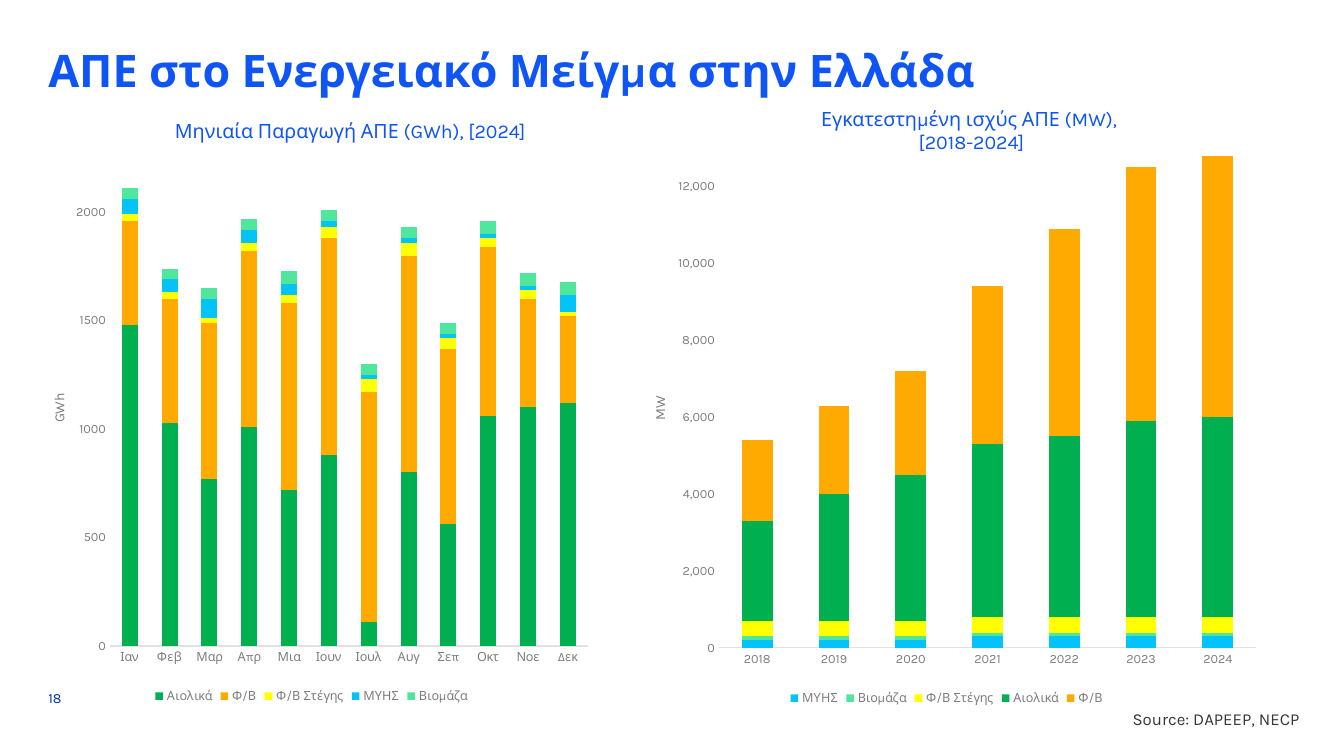
from dataclasses import dataclass

from lxml.etree import SubElement
from pptx import Presentation
from pptx.chart.data import CategoryChartData as Data
from pptx.dml.color import RGBColor as RGB
from pptx.enum.chart import XL_CHART_TYPE as Kind
from pptx.enum.chart import XL_LEGEND_POSITION as Place
from pptx.enum.chart import XL_TICK_MARK as Tick
from pptx.enum.text import MSO_ANCHOR as Anchor
from pptx.enum.text import PP_ALIGN as Align
from pptx.oxml.ns import qn
from pptx.util import Inches, Pt


@dataclass
class Theme:
    font: str = "Karla"
    blue: str = "0F55F5"
    navy: str = "0032A0"
    ink: str = "373737"
    gray: str = "7D7D7D"
    rule: str = "E1E1E1"
    title: int = 32
    head: int = 14
    note: int = 12
    small: int = 10
    label: int = 9


look = Theme()

# Content
TINTS = {
    "Αιολικά": "00B050",
    "Φ/Β": "FFAA00",
    "Φ/Β Στέγης": "FFFF00",
    "ΜΥΗΣ": "03C3F8",
    "Βιομάζα": "50E69B",
}

MONTHLY = {
    "box": (0.22, 1.35, 5.74, 5.67),
    "plot": (1.09, 1.46, 4.74, 4.95),
    "unit": "GWh",
    "unit_at": (0.47, 3.88),
    "top": 2300,
    "step": 500,
    "format": "General",
    "cats": ["Ιαν", "Φεβ", "Μαρ", "Απρ", "Μια", "Ιουν",
             "Ιουλ", "Αυγ", "Σεπ", "Οκτ", "Νοε", "Δεκ"],
    "rows": {
        "Αιολικά": [1480, 1030, 770, 1010, 720, 880, 110, 800, 560, 1060, 1100, 1120],
        "Φ/Β": [480, 570, 720, 810, 860, 1000, 1060, 1000, 810, 780, 500, 400],
        "Φ/Β Στέγης": [30, 30, 20, 40, 40, 50, 60, 60, 50, 40, 40, 20],
        "ΜΥΗΣ": [70, 60, 90, 60, 50, 30, 20, 20, 20, 20, 20, 80],
        "Βιομάζα": [50, 50, 50, 50, 60, 50, 50, 50, 50, 60, 60, 60],
    },
}

YEARLY = {
    "box": (6.19, 1.37, 6.4, 5.67),
    "plot": (7.13, 1.47, 5.33, 4.96),
    "unit": "MW",
    "unit_at": (6.43, 3.91),
    "top": 13000,
    "step": 2000,
    "format": "#,##0",
    "cats": [str(year) for year in range(2018, 2025)],
    "rows": {
        "ΜΥΗΣ": [200, 200, 200, 300, 300, 300, 300],
        "Βιομάζα": [100] * 7,
        "Φ/Β Στέγης": [400] * 7,
        "Αιολικά": [2600, 3300, 3800, 4500, 4700, 5100, 5200],
        "Φ/Β": [2100, 2300, 2700, 4100, 5400, 6600, 6800],
    },
}

# Wording, box, size, colour, bold, alignment, anchor, (side, top) inset
TEXTS = [
    ("ΑΠΕ στο Ενεργειακό Μείγμα στην Ελλάδα", (0.48, 0.42, 12.36, 0.54),
     look.title, look.blue, True, Align.LEFT, Anchor.TOP, (0, 0)),
    ("Μηνιαία Παραγωγή ΑΠΕ (GWh), [2024]", (1.43, 1.13, 4.09, 0.34),
     look.head, look.blue, False, Align.CENTER, Anchor.TOP, (0.1, 0.05)),
    ("Εγκατεστημένη ισχύς ΑΠΕ (MW), \v[2018-2024]", (7.59, 1.01, 4.09, 0.57),
     look.head, look.blue, False, Align.CENTER, Anchor.TOP, (0.1, 0.05)),
    ("18", (0.48, 6.84, 0.28, 0.17),
     look.small, look.navy, False, Align.LEFT, Anchor.BOTTOM, (0, 0)),
    ("Source: DAPEEP, NECP", (8.36, 7.03, 4.53, 0.2),
     look.note, look.ink, False, Align.RIGHT, Anchor.TOP, (0, 0)),
]


def style(font, size, color, bold=False):
    font.name = look.font
    font.size = Pt(size)
    font.bold = bold
    font.color.rgb = RGB.from_string(color)


def add_text(slide, words, box, size, color, bold, align, anchor, inset):
    frame = slide.shapes.add_textbox(*map(Inches, box)).text_frame
    frame.word_wrap = True
    frame.vertical_anchor = anchor
    side, top = map(Inches, inset)
    frame.margin_left = frame.margin_right = side
    frame.margin_top = frame.margin_bottom = top
    para = frame.paragraphs[0]
    para.text = words
    para.alignment = align
    for run in para.runs:
        style(run.font, size, color, bold)


def pin(layout, box, spot, inner=False):
    """Fix a chart part at slide inches, stored as shares of the chart box."""
    left, top, wide, high = box
    part = SubElement(layout, qn("c:manualLayout"))
    if inner:
        SubElement(part, qn("c:layoutTarget")).set("val", "inner")
    shares = [(spot[0] - left) / wide, (spot[1] - top) / high]
    shares += [size / full for size, full in zip(spot[2:], (wide, high))]
    for key in "xy":
        SubElement(part, qn(f"c:{key}Mode")).set("val", "edge")
    for key, share in zip("xywh", shares):
        SubElement(part, qn(f"c:{key}")).set("val", f"{share:.4f}")


def add_stack(slide, info):
    data = Data(number_format=info["format"])
    data.categories = info["cats"]
    for name, vals in info["rows"].items():
        data.add_series(name, vals)
    box = info["box"]
    chart = slide.shapes.add_chart(
        Kind.COLUMN_STACKED, *map(Inches, box), data).chart
    style(chart.font, look.small, look.ink)
    chart.has_title = False

    # Columns
    plot = chart.plots[0]
    plot.gap_width = 150
    plot.overlap = 100
    plot.vary_by_categories = False
    for series in plot.series:
        series.format.fill.solid()
        series.format.fill.fore_color.rgb = RGB.from_string(TINTS[series.name])

    # Axes
    cat, val = chart.category_axis, chart.value_axis
    for axis in (cat, val):
        axis.major_tick_mark = axis.minor_tick_mark = Tick.NONE
        axis.has_major_gridlines = False
        style(axis.tick_labels.font, look.label, look.gray)
    cat.format.line.color.rgb = RGB.from_string(look.rule)
    cat.format.line.width = Pt(0.75)
    val.format.line.fill.background()
    val.minimum_scale = 0
    val.maximum_scale = info["top"]
    val.major_unit = info["step"]
    val.tick_labels.number_format = info["format"]
    val.tick_labels.number_format_is_linked = False

    # Axis title
    frame = val.axis_title.text_frame
    frame.text = info["unit"]
    style(frame.paragraphs[0].runs[0].font, look.small, look.gray)

    # Legend
    chart.has_legend = True
    chart.legend.position = Place.BOTTOM
    chart.legend.include_in_layout = False
    style(chart.legend.font, look.label, look.gray)

    # Fixed places
    area = chart.element.find(".//" + qn("c:plotArea"))
    spots = [(area, info["plot"], True),
             (area.find(".//" + qn("c:title")), info["unit_at"], False)]
    for owner, spot, inner in spots:
        layout = owner.find(qn("c:layout"))
        if layout is None:
            layout = SubElement(owner, qn("c:layout"))
            owner.insert(0 if inner else 1, layout)
        pin(layout, box, spot, inner)


def main():
    deck = Presentation()
    deck.slide_width, deck.slide_height = Inches(13.33), Inches(7.5)
    slide = deck.slides.add_slide(deck.slide_layouts[6])
    for info in (MONTHLY, YEARLY):
        add_stack(slide, info)
    for item in TEXTS:
        add_text(slide, *item)
    deck.save("out.pptx")


if __name__ == "__main__":
    main()
